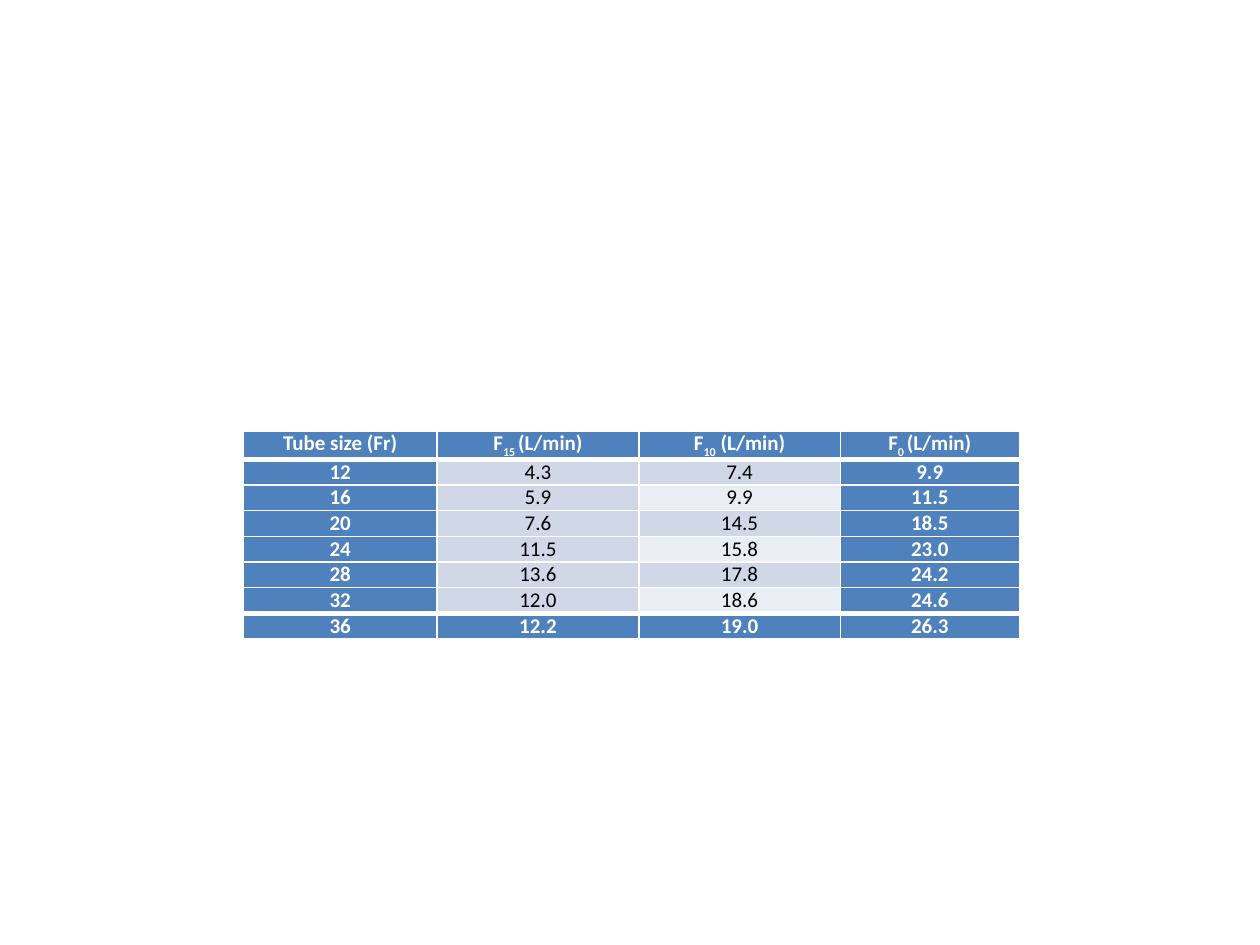
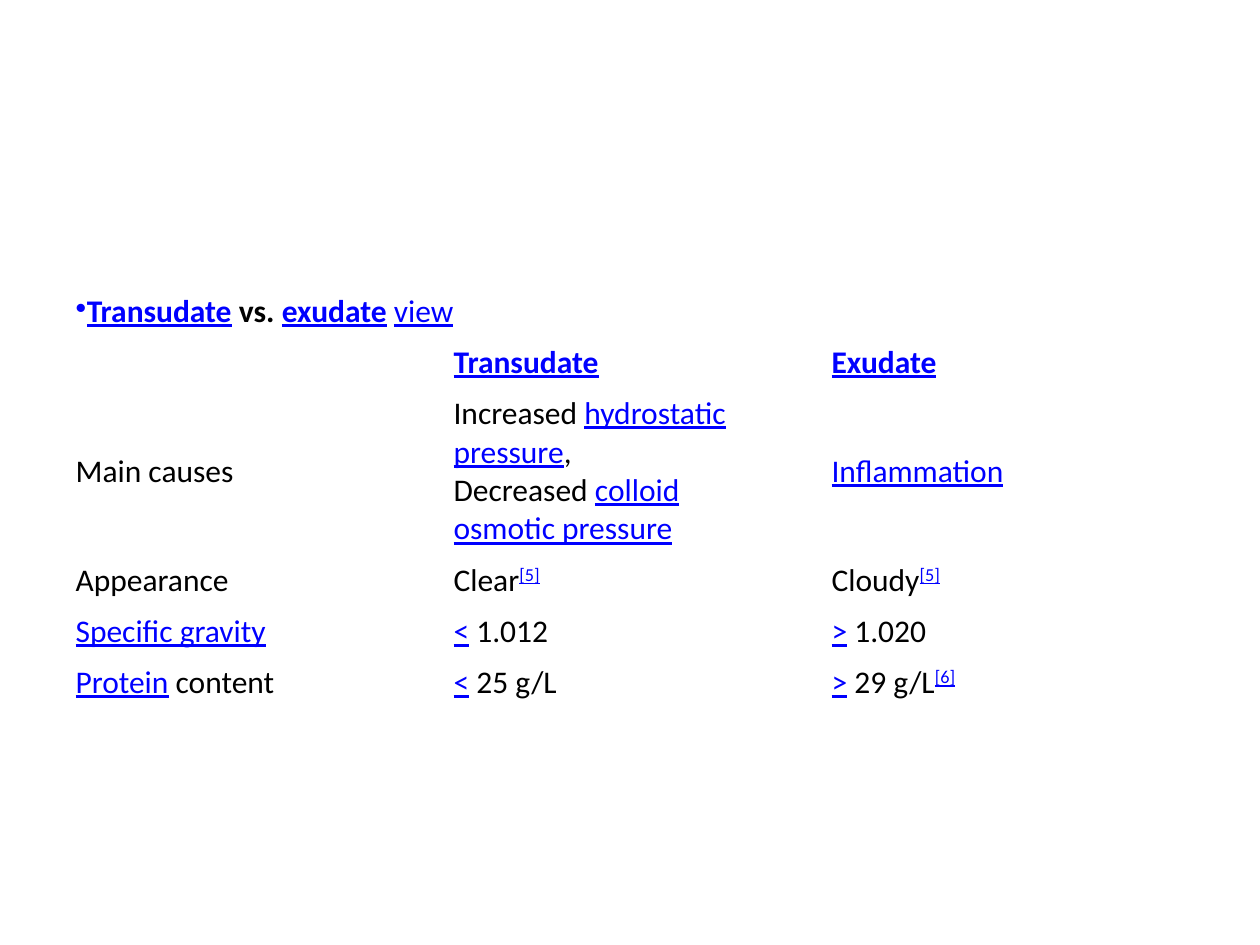
from lxml import etree
from pptx import Presentation
from pptx.dml.color import RGBColor
from pptx.enum.text import MSO_ANCHOR, PP_ALIGN
from pptx.oxml.ns import qn
from pptx.util import Inches, Pt

CENTER, LEFT = PP_ALIGN.CENTER, PP_ALIGN.LEFT
TOP, MIDDLE = MSO_ANCHOR.TOP, MSO_ANCHOR.MIDDLE

WHITE = RGBColor(0xFF, 0xFF, 0xFF)
BLACK = RGBColor(0x00, 0x00, 0x00)
LINK_BLUE = RGBColor(0x00, 0x00, 0xFF)
HEADER_BLUE = RGBColor(0x4F, 0x81, 0xBD)
BAND_DARK = RGBColor(0xD0, 0xD8, 0xE8)
BAND_LIGHT = RGBColor(0xE9, 0xED, 0xF4)

FONT = "Calibri"
BREAK = "\n"

FLOW_RATES = [
    ("12", "4.3", "7.4", "9.9"),
    ("16", "5.9", "9.9", "11.5"),
    ("20", "7.6", "14.5", "18.5"),
    ("24", "11.5", "15.8", "23.0"),
    ("28", "13.6", "17.8", "24.2"),
    ("32", "12.0", "18.6", "24.6"),
    ("36", "12.2", "19.0", "26.3"),
]


def styled(text, **style):
    return text, style


def link(text, **style):
    return styled(text, color=LINK_BLUE, underline=True, **style)


def citation(text):
    return link(text, baseline=30)


def subscript(text):
    return styled(text, baseline=-25)


def add_run(paragraph, text, size=18, color=BLACK, bold=False,
            underline=False, baseline=0):
    """Add formatted text; baseline is a percentage above or below the line."""
    run = paragraph.add_run()
    run.text = text
    font = run.font
    font.name, font.size, font.bold = FONT, Pt(size), bold
    font.underline = underline
    font.color.rgb = color
    if baseline:
        run._r.get_or_add_rPr().set("baseline", str(baseline * 1000))


def write_cell(cell, parts, align=LEFT, anchor=MIDDLE, **base):
    """Fill a cell from plain strings, styled parts and line breaks."""
    cell.vertical_anchor = anchor
    paragraph = cell.text_frame.paragraphs[0]
    paragraph.alignment = align
    for part in parts:
        if part == BREAK:
            paragraph.add_line_break()
        else:
            text, style = (part, {}) if isinstance(part, str) else part
            add_run(paragraph, text, **{**base, **style})


def add_bullet(paragraph):
    properties = paragraph._p.get_or_add_pPr()
    properties.set("marL", "0")
    properties.set("indent", "0")
    etree.SubElement(properties, qn("a:buChar")).set("char", "•")


def set_borders(cell, color, **widths):
    """Draw the sides L, R, T and B with the given widths in points."""
    properties = cell._tc.get_or_add_tcPr()
    for side, width in widths.items():
        line = etree.SubElement(properties, qn(f"a:ln{side}"))
        line.set("w", str(Pt(width)))
        fill = etree.SubElement(line, qn("a:solidFill"))
        etree.SubElement(fill, qn("a:srgbClr")).set("val", str(color))


def add_grid(slide, left, top, column_widths, row_heights):
    table = slide.shapes.add_table(
        len(row_heights), len(column_widths), Inches(left), Inches(top),
        Inches(sum(column_widths)), Inches(sum(row_heights))).table
    table.first_row = table.horz_banding = False
    for column, width in zip(table.columns, column_widths):
        column.width = Inches(width)
    for row, height in zip(table.rows, row_heights):
        row.height = Inches(height)
    return table


def build_flow_slide(slide):
    header = [
        ["Tube size (Fr)"],
        ["F", subscript("15 "), "(L/min)"],
        ["F", subscript("10"), " (L/min)"],
        ["F", subscript("0 "), "(L/min)"],
    ]
    rows = [header] + [[[value] for value in rates] for rates in FLOW_RATES]
    last = len(rows) - 1
    table = add_grid(slide, 1.93, 3.42, [1.54, 1.6, 1.6, 1.42],
                     [0.2] * len(rows))
    for r, row in enumerate(rows):
        for c, parts in enumerate(row):
            cell = table.cell(r, c)
            cell.margin_left = cell.margin_right = Inches(0.07)
            cell.margin_top = cell.margin_bottom = 0
            emphasized = r in (0, last) or c in (0, 3)
            if emphasized:
                background = HEADER_BLUE
            else:
                background = BAND_LIGHT if c == 2 and r % 2 == 0 else BAND_DARK
            set_borders(cell, WHITE, L=1, R=1,
                        T=3 if r in (1, last) else 1,
                        B=3 if r in (0, last - 1) else 1)
            cell.fill.solid()
            cell.fill.fore_color.rgb = background
            write_cell(cell, parts, align=CENTER, anchor=TOP, size=12,
                       color=WHITE if emphasized else BLACK, bold=emphasized)


def build_effusion_slide(slide):
    rows = [
        [[link("Transudate", bold=True), styled(" vs. ", bold=True),
          link("exudate", bold=True), " ", link("view")], [], []],
        [[], [link("Transudate", bold=True)], [link("Exudate", bold=True)]],
        [["Main causes"],
         ["Increased ", link("hydrostatic"), BREAK, link("pressure"), ",",
          BREAK, "Decreased ", link("colloid"), BREAK,
          link("osmotic pressure")],
         [link("Inflammation")]],
        [["Appearance"], ["Clear", citation("[5]")],
         ["Cloudy", citation("[5]")]],
        [[link("Specific gravity")], [link("<"), " 1.012"],
         [link(">"), " 1.020"]],
        [[link("Protein"), " content"], [link("<"), " 25 g/L"],
         [link(">"), " 29 g/L", citation("[6]")]],
    ]
    table = add_grid(slide, 0.5, 2.27, [3] * 3,
                     [0.4, 0.4, 1.3, 0.4, 0.4, 0.4])
    title = table.cell(0, 0)
    title.merge(table.cell(0, 2))
    for r, row in enumerate(rows):
        for c, parts in enumerate(row):
            cell = table.cell(r, c)
            cell.fill.background()
            write_cell(cell, parts)
    add_bullet(title.text_frame.paragraphs[0])


def main():
    deck = Presentation()
    deck.slide_width, deck.slide_height = Inches(10), Inches(7.5)
    blank = deck.slide_layouts[6]
    for build in (build_flow_slide, build_effusion_slide):
        build(deck.slides.add_slide(blank))
    deck.save("out.pptx")


if __name__ == "__main__":
    main()
